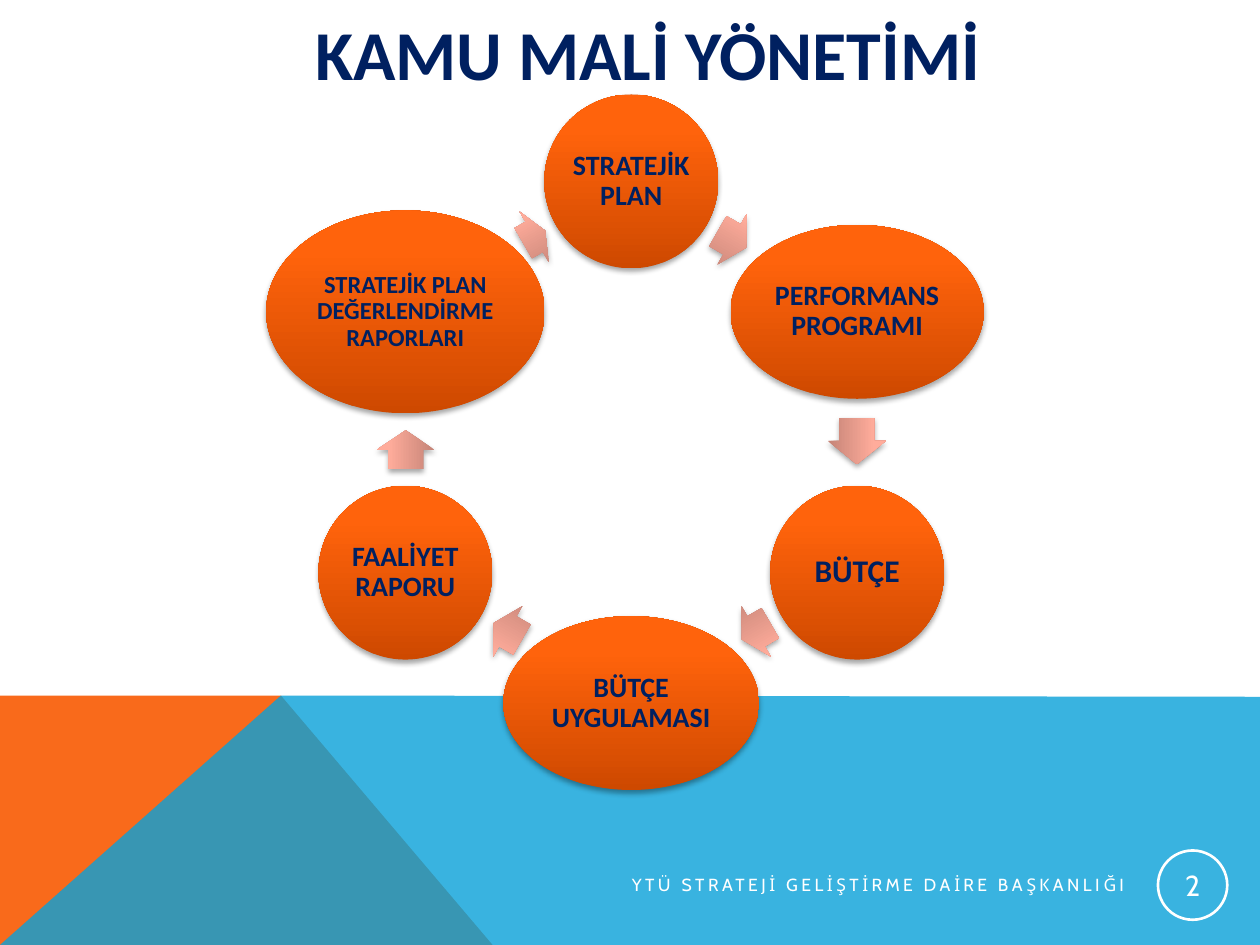
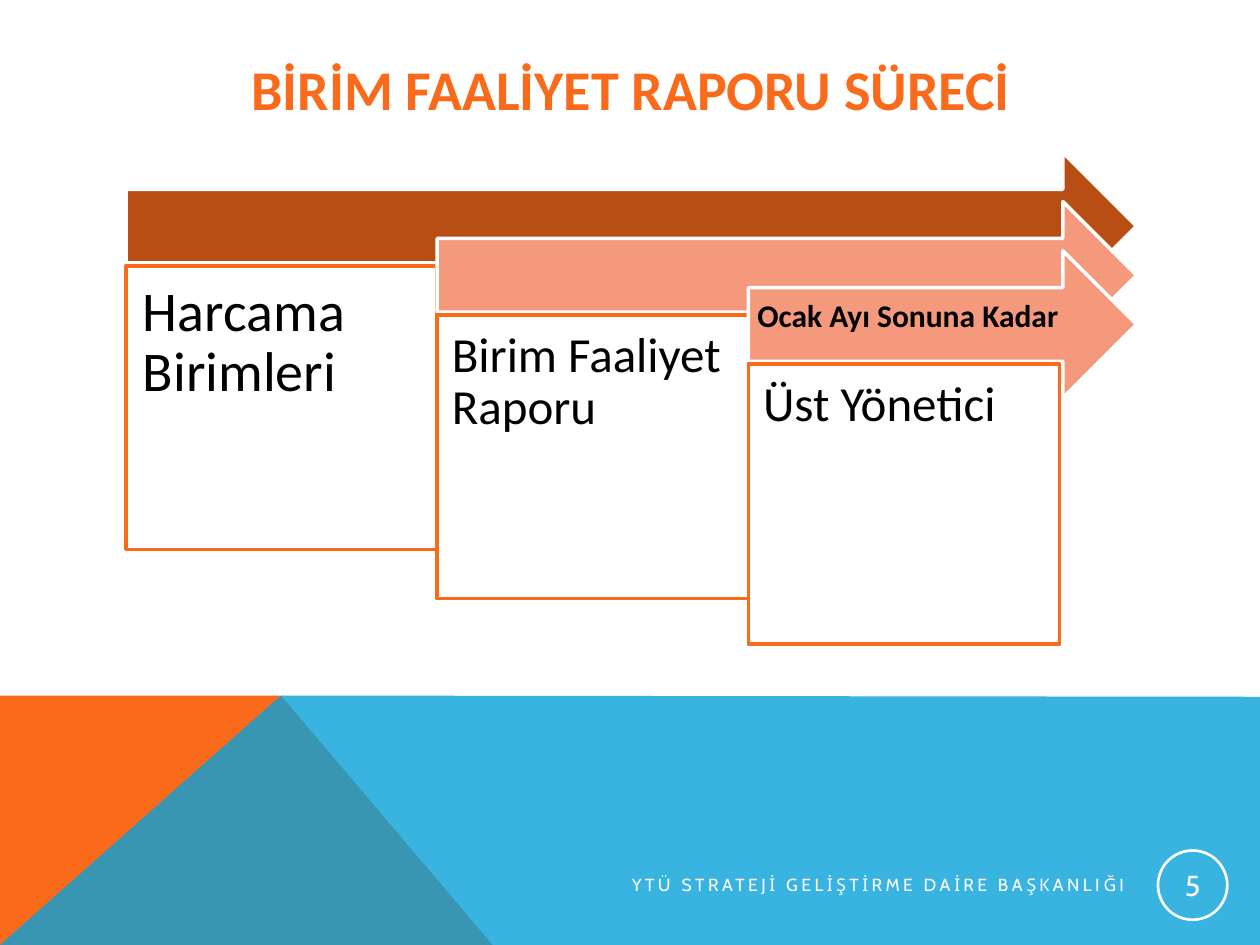
"""Build two slides on public finance and the unit activity report."""
import math
from lxml import etree
from pptx import Presentation
from pptx import util as u
from pptx.dml.color import RGBColor
from pptx.enum import shapes, text
from pptx.oxml.ns import qn

HUES = {
    "orange": "F96A1B", "blue": "08A1D9", "navy": "002060", "white": "FFFFFF",
    "black": "000000", "rust": "B84E14", "salmon": "F5997D",
    "low": "CE4900", "high": "FF630C", "dim": "C58477", "pale": "FFAC9B",
}
FOOT = "YTÜ STRATEJİ GELİŞTİRME DAİRE BAŞKANLIĞI"
KIND = shapes.MSO_SHAPE
MID = text.MSO_ANCHOR.MIDDLE
LEFT, CENTER, RIGHT = text.PP_ALIGN.LEFT, text.PP_ALIGN.CENTER, text.PP_ALIGN.RIGHT


def hue(name):
    return RGBColor.from_string(HUES[name])


def apply(target, values):
    for key, value in values.items():
        setattr(target, key, value)


def cast(effects, alpha, blur, dist, angle):
    shade = etree.SubElement(effects, qn("a:outerShdw"), blurRad=str(u.Pt(blur)),
                             dist=str(u.Pt(dist)), dir=str(angle * 60000), rotWithShape="0")
    color = etree.SubElement(shade, qn("a:srgbClr"), val=HUES["black"])
    etree.SubElement(color, qn("a:alpha"), val=str(alpha * 1000))


class Deck:
    def __init__(self):
        self.show = Presentation()
        apply(self.show, {"slide_width": u.Inches(10), "slide_height": u.Inches(7.5)})
        self.slide = None

    def label(self, shape, words, size, tint, face="Calibri", bold=False, align=CENTER,
              anchor=MID, pads=(0.02,) * 4, wrap=True, lead=0.9):
        frame = shape.text_frame
        sides = ("margin_left", "margin_top", "margin_right", "margin_bottom")
        apply(frame, dict(zip(sides, map(u.Inches, pads))))
        apply(frame, {"word_wrap": wrap, "vertical_anchor": anchor,
                      "auto_size": text.MSO_AUTO_SIZE.NONE})
        para = frame.paragraphs[0]
        apply(para, {"alignment": align, "line_spacing": lead})
        run = para.add_run()
        run.text = words
        apply(run.font, {"name": face, "size": u.Pt(size), "bold": bold})
        run.font.color.rgb = hue(tint)
        return run

    def style(self, shape, fill=None, line=None, width=2):
        shape.shadow.inherit = False
        if fill is None:
            shape.fill.background()
        elif isinstance(fill, tuple):
            shape.fill.gradient()
            shape.fill.gradient_angle = 90
            for stop, name, place in zip(shape.fill.gradient_stops, fill, (0, 0.8)):
                stop.color.rgb = hue(name)
                stop.position = place
            cast(shape._element.spPr.find(qn("a:effectLst")), 35, 3.1, 1.8, 90)
        else:
            shape.fill.solid()
            shape.fill.fore_color.rgb = hue(fill)
        if line:
            shape.line.color.rgb = hue(line)
            shape.line.width = u.Pt(width)
        else:
            shape.line.fill.background()
        return shape

    def shape(self, kind, box, **look):
        return self.style(self.slide.shapes.add_shape(kind, *map(u.Inches, box)), **look)

    def band(self, points, fill, alpha=100):
        spots = [(u.Inches(x), u.Inches(y)) for x, y in points]
        build = self.slide.shapes.build_freeform(*spots[0])
        build.add_line_segments(spots[1:], close=True)
        shape = self.style(build.convert_to_shape(), fill)
        color = shape._element.spPr.find(qn("a:solidFill"))[0]
        etree.SubElement(color, qn("a:alpha"), val=str(alpha * 1000))

    def page(self, number, title, box, size, tint, shade=False):
        self.slide = self.show.slides.add_slide(self.show.slide_layouts[5])
        self.band([(0, 7.5), (0, 5.52), (2.23, 5.52), (3.91, 7.5)], "orange")
        self.band([(0, 7.5), (2.23, 5.52), (10, 5.53), (10, 7.5)], "blue", 80)
        head = self.slide.shapes.title
        apply(head, dict(zip(("left", "top", "width", "height"), map(u.Inches, box))))
        run = self.label(head, title, size, tint, bold=True, wrap=not shade,
                         pads=(0.1, 0.05) * 2, lead=1)
        if shade:
            effects = etree.Element(qn("a:effectLst"))
            cast(effects, 50, 4, 3, 45)
            run.font._element.find(qn("a:solidFill")).addnext(effects)
        self.footer(number)

    def footer(self, number):
        box = self.slide.shapes.add_textbox(*map(u.Inches, (3.85, 6.87, 5.17, 0.3)))
        run = self.label(box, FOOT, 10, "white", "Cabin", align=RIGHT,
                         pads=(0.1, 0.05) * 2, lead=1)
        run.font._element.set("spc", "200")
        badge = self.shape(KIND.OVAL, (9.19, 6.75, 0.55, 0.55), line="white", width=1.5)
        self.label(badge, str(number), 16.5, "white", "Cabin", pads=(0.01,) * 4, lead=1)

    def node(self, x, y, wide, high, words, size):
        box = (x - wide / 2, y - high / 2, wide, high)
        oval = self.shape(KIND.OVAL, box, fill=("low", "high"))
        self.label(oval, words, size, "navy", bold=True)

    def turn(self, x, y, wide, angle):
        box = (x - wide / 2, y - 0.23, wide, 0.46)
        arrow = self.shape(KIND.RIGHT_ARROW, box, fill=("dim", "pale"))
        arrow.adjustments[0] = 0.6
        arrow.rotation = angle

    def step(self, index, words, size, high, fill, note=None):
        x, drop = 1 + 2.47 * index, 0.39 * index
        arrow = self.shape(KIND.RIGHT_ARROW, (x, 1.21 + drop, 9.02 - x, 1.17),
                           fill=fill, line="white")
        if note:
            self.label(arrow, note, 18, "black", bold=True, align=LEFT,
                       pads=(0.07, 0.07, 0.28, 0.19))
        card = self.shape(KIND.RECTANGLE, (x, 2.11 + drop, 2.47, high),
                          fill="white", line="orange")
        self.label(card, words, size, "black", align=LEFT, anchor=text.MSO_ANCHOR.TOP,
                   pads=(size / 240,) * 4)


def main():
    deck = Deck()
    deck.page(2, "KAMU MALİ YÖNETİMİ", (2.31, 0.03, 5.66, 0.77), 40, "navy", shade=True)
    nodes = [
        ("STRATEJİK PLAN", 16, 1.38, 1.38),
        ("PERFORMANS PROGRAMI", 16, 2.01, 1.38),
        ("BÜTÇE", 18, 1.38, 1.38),
        ("BÜTÇE UYGULAMASI", 16, 2.03, 1.38),
        ("FAALİYET RAPORU", 16, 1.38, 1.38),
        ("STRATEJİK PLAN DEĞERLENDİRME RAPORLARI", 14, 2.21, 1.61),
    ]
    turns = [(5.81, 1.9, 0.26), (6.8, 3.5, 0.37), (6, 5.01, 0.26),
             (4.03, 5.01, 0.26), (3.22, 3.57, 0.31), (4.24, 1.88, 0.2)]
    for index, ((words, size, wide, high), turn) in enumerate(zip(nodes, turns)):
        angle = math.radians(60 * index)
        x, y = 5.01 + 2.07 * math.sin(angle), 3.51 - 2.07 * math.cos(angle)
        deck.node(x, y, wide, high, words, size)
        deck.turn(*turn, 30 + 60 * index)

    deck.page(5, "BİRİM FAALİYET RAPORU SÜRECİ", (0.9, 0.4, 8.22, 0.6), 32, "orange")
    steps = [
        ("Harcama Birimleri", 32, 2.25, "rust"),
        ("Birim Faaliyet Raporu", 28, 2.25, "salmon"),
        ("Üst Yönetici", 28, 2.22, "salmon", "Ocak Ayı Sonuna Kadar"),
    ]
    for index, step in enumerate(steps):
        deck.step(index, *step)
    deck.show.save("out.pptx")


if __name__ == "__main__":
    main()
